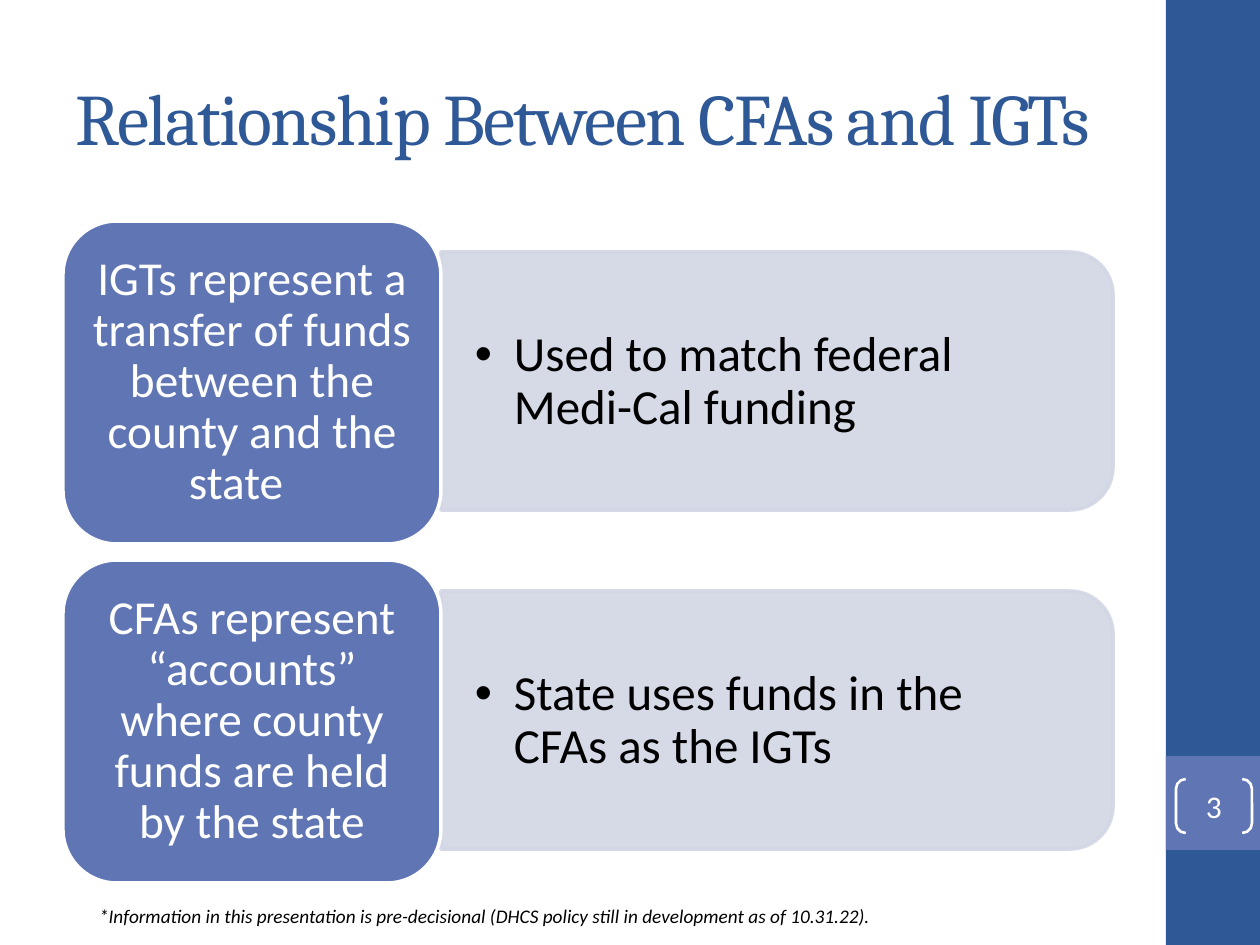
"""Build the slide on how CFAs and IGTs relate."""
from dataclasses import dataclass

from lxml.etree import SubElement
from pptx import Presentation
from pptx.dml.color import RGBColor
from pptx.enum.shapes import MSO_SHAPE
from pptx.enum.text import MSO_ANCHOR, PP_ALIGN
from pptx.oxml.ns import qn
from pptx.util import Pt

EMU_PER_PX = 914400 / 126
ROW_TOP = 221
ROW_PITCH = 339
ROWS = [
    ("IGTs represent a transfer of funds between the county and the state\t",
     "Used to match federal Medi-Cal funding"),
    ("CFAs represent “accounts” where county funds are held by the state",
     "State uses funds in the CFAs as the IGTs"),
]


def px(length):
    return round(length * EMU_PER_PX)


@dataclass(frozen=True)
class Theme:
    navy: str = "2F5897"
    blue: str = "6076B4"
    pale: str = "D2D6E5"
    white: str = "FFFFFF"
    black: str = "000000"
    heading_font: str = "Cambria"
    body_font: str = "Calibri"
    title_size: float = 41.4
    detail_size: int = 28
    label_size: int = 27
    number_size: int = 18
    note_size: int = 11


class SlideBuilder:
    def __init__(self, slide, theme):
        self.slide = slide
        self.theme = theme

    def shape(self, kind, box, fill=None, line=None, width=2, opacity=100):
        shape = self.slide.shapes.add_shape(kind, *map(px, box))
        shape.shadow.inherit = False
        for part, color in ((shape.fill, fill), (shape.line.fill, line)):
            if color is None:
                part.background()
                continue
            part.solid()
            part.fore_color.rgb = RGBColor.from_string(color)
        if line:
            shape.line.width = Pt(width)
        if opacity < 100:
            for color in shape._element.spPr.iter(qn("a:srgbClr")):
                SubElement(color, qn("a:alpha"), val=str(opacity * 1000))
        return shape

    def label(self, shape, text, size, color, font=None, insets=(13, 6),
              align=PP_ALIGN.LEFT, anchor=MSO_ANCHOR.MIDDLE, spacing=None):
        frame = shape.text_frame
        frame.text = text
        frame.word_wrap = True
        frame.vertical_anchor = anchor
        frame.margin_left = frame.margin_right = px(insets[0])
        frame.margin_top = frame.margin_bottom = px(insets[1])
        paragraph = frame.paragraphs[0]
        paragraph.alignment = align
        paragraph.line_spacing = spacing
        run = paragraph.runs[0]
        run.font.name = font or self.theme.body_font
        run.font.size = Pt(size)
        run.font.color.rgb = RGBColor.from_string(color)
        return paragraph

    def textbox(self, box, *args, **style):
        holder = self.slide.shapes.add_textbox(*map(px, box))
        return self.label(holder, *args, **style)

    def sidebar(self, number):
        theme = self.theme
        self.shape(MSO_SHAPE.RECTANGLE, (1166, 0, 94, 945), theme.navy)
        self.shape(MSO_SHAPE.RECTANGLE, (1166, 756, 94, 94), theme.blue)
        brackets = self.shape(MSO_SHAPE.DOUBLE_BRACKET, (1176, 779, 76, 54),
                              line=theme.white, width=1.5)
        brackets.adjustments[0] = 0.18
        self.label(brackets, number, theme.number_size, theme.white,
                   insets=(0, 0), align=PP_ALIGN.CENTER)

    def title(self, text):
        theme = self.theme
        heading = self.textbox((63, 38, 1050, 158), text, theme.title_size,
                               theme.navy, font=theme.heading_font)
        heading.runs[0].font._element.set("spc", "-100")

    def footnote(self, text):
        note = self.textbox((86, 898, 1041, 37), text, self.theme.note_size,
                            self.theme.black, anchor=MSO_ANCHOR.TOP)
        note.runs[0].font.italic = True

    def row(self, top, summary, detail):
        theme = self.theme
        panel = self.shape(MSO_SHAPE.ROUND_2_SAME_RECTANGLE,
                           (648, top - 176, 258, 672),
                           theme.pale, theme.pale, opacity=90)
        panel.rotation = 90
        bullet = self.textbox((441, top + 45, 659, 233), detail,
                              theme.detail_size, theme.black,
                              insets=(34, 18), spacing=0.9)
        properties = bullet._p.get_or_add_pPr()
        properties.set("marL", str(px(39)))
        properties.set("indent", str(px(-39)))
        SubElement(properties, qn("a:buFont"), typeface="Arial")
        SubElement(properties, qn("a:buChar"), char="•")
        card = self.shape(MSO_SHAPE.ROUNDED_RECTANGLE, (63, top, 378, 323),
                          theme.blue, theme.white)
        self.label(card, summary, theme.label_size, theme.white,
                   insets=(14, 8), align=PP_ALIGN.CENTER, spacing=0.9)


def main():
    deck = Presentation()
    deck.slide_width, deck.slide_height = px(1260), px(945)
    builder = SlideBuilder(deck.slides.add_slide(deck.slide_layouts[6]), Theme())
    builder.sidebar("3")
    builder.footnote("*Information in this presentation is pre-decisional "
                     "(DHCS policy still in development as of 10.31.22).")
    builder.title("Relationship Between CFAs and IGTs")
    for index, (summary, detail) in enumerate(ROWS):
        builder.row(ROW_TOP + index * ROW_PITCH, summary, detail)
    deck.save("out.pptx")


if __name__ == "__main__":
    main()
